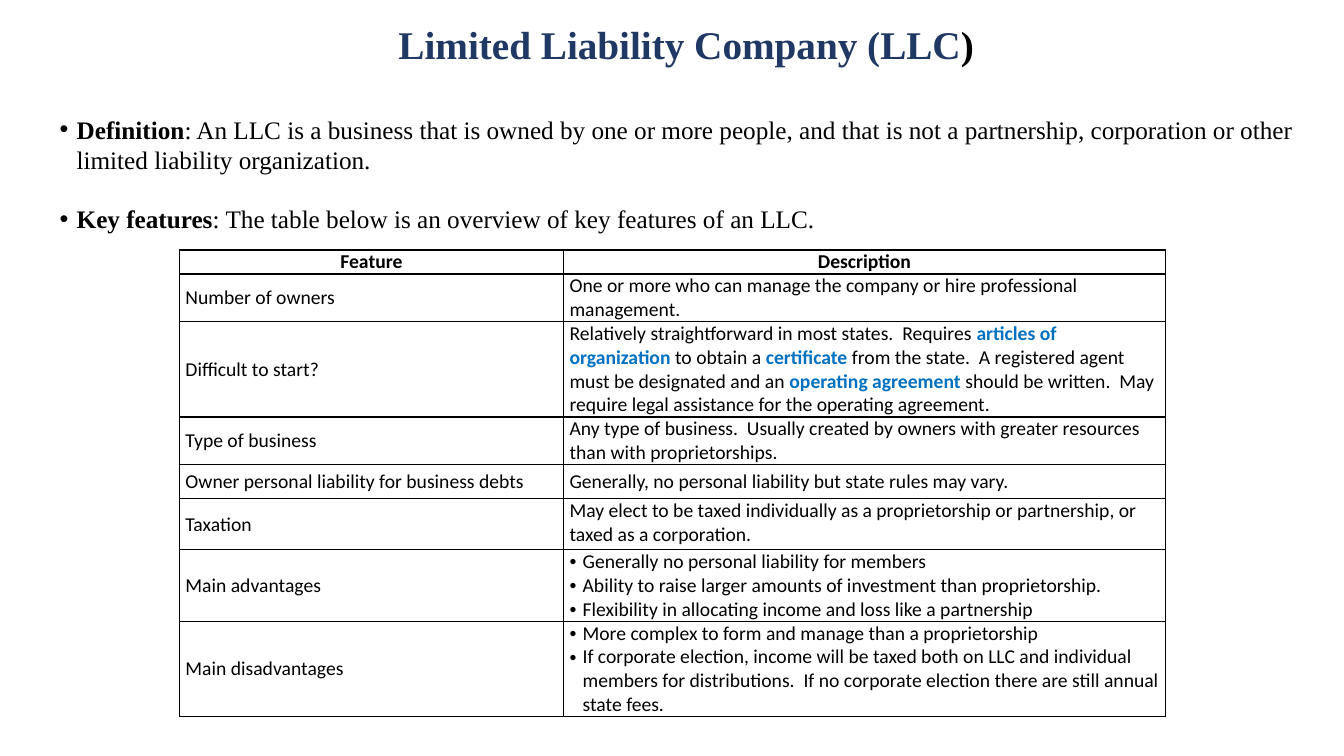
from dataclasses import dataclass
from typing import Any, NamedTuple

from lxml import etree
from pptx import Presentation
from pptx import util as u
from pptx.dml.color import RGBColor
from pptx.enum import text
from pptx.oxml.ns import qn

SLIDE_WIDTH, SLIDE_HEIGHT = u.Inches(13.33), u.Inches(7.5)
BLACK, NAVY, BLUE = "000000", "203864", "0070C0"
SERIF, SANS = "Times New Roman", "Calibri"


class Run(NamedTuple):
    words: str
    bold: bool = False
    colour: str = BLACK


class Box(NamedTuple):
    """Left, top, width and height in percent of the slide."""
    left: float
    top: float
    width: float
    height: float


@dataclass
class Line:
    runs: list[Run]
    hanging: float = 0  # inches; a bullet is drawn when above zero
    centred: bool = False
    before: float = 0


@dataclass
class Feature:
    label: Line
    description: list[Line]
    height: float  # percent of the slide height
    middle: bool = False


def across(percent: float) -> int:
    return round(SLIDE_WIDTH * percent / 100)


def down(percent: float) -> int:
    return round(SLIDE_HEIGHT * percent / 100)


def colour(code: str) -> RGBColor:
    return RGBColor.from_string(code)


def set_format(target: Any, values: dict[str, Any]) -> None:
    for name, value in values.items():
        setattr(target, name, value)


def place(shape: Any, box: Box) -> None:
    set_format(shape, {"left": across(box.left), "top": down(box.top),
                       "width": across(box.width), "height": down(box.height)})


def set_bullet(paragraph: Any, hanging: float) -> None:
    properties = paragraph._p.get_or_add_pPr()
    properties.set("marL", str(u.Inches(hanging)))
    properties.set("indent", str(-u.Inches(hanging)))
    if hanging:
        etree.SubElement(properties, qn("a:buFont"), typeface="Arial")
        etree.SubElement(properties, qn("a:buChar"), char="•")
    else:
        etree.SubElement(properties, qn("a:buNone"))


def write(frame: Any, lines: list[Line], font: str, size: float) -> None:
    for index, line in enumerate(lines):
        paragraph = frame.add_paragraph() if index else frame.paragraphs[0]
        alignment = text.PP_ALIGN.CENTER if line.centred else text.PP_ALIGN.LEFT
        set_format(paragraph, {"alignment": alignment, "line_spacing": 1.0,
                               "space_before": u.Pt(line.before), "space_after": u.Pt(0)})
        set_bullet(paragraph, line.hanging)
        for part in line.runs:
            run = paragraph.add_run()
            run.text = part.words
            set_format(run.font, {"name": font, "size": u.Pt(size), "bold": part.bold})
            run.font.color.rgb = colour(part.colour)


def set_borders(cell: Any) -> None:
    properties = cell._tc.get_or_add_tcPr()
    for side in ("lnL", "lnR", "lnT", "lnB"):
        border = etree.SubElement(properties, qn(f"a:{side}"), w=str(u.Pt(1)))
        fill = etree.SubElement(border, qn("a:solidFill"))
        etree.SubElement(fill, qn("a:srgbClr"), val=BLACK)


def fill_cell(cell: Any, lines: list[Line], middle: bool) -> None:
    anchor = text.MSO_ANCHOR.MIDDLE if middle else text.MSO_ANCHOR.TOP
    set_format(cell, {"margin_left": u.Inches(0.06), "margin_right": u.Inches(0.06),
                      "margin_top": 0, "margin_bottom": 0, "vertical_anchor": anchor})
    set_borders(cell)
    cell.fill.background()
    write(cell.text_frame, lines, SANS, 14)


def plain(words: str) -> Line:
    return Line([Run(words)])


def bullet(words: str) -> Line:
    return Line([Run(words)], hanging=0.13)


def heading(words: str) -> Line:
    return Line([Run(words, True)], centred=True)


def term(words: str) -> Run:
    return Run(words, True, BLUE)


TITLE = Line([Run("Limited Liability Company (LLC", True, NAVY), Run(")", True)], centred=True)

POINTS = [
    Line([Run("Definition", True),
          Run(": An LLC is a business that is owned by one or more people, and that is not "
              "a partnership, corporation or other limited liability organization.")],
         hanging=0.17),
    Line([Run("Key features", True),
          Run(": The table below is an overview of key features of an LLC.")],
         hanging=0.17, before=21),
]

FEATURES = [
    Feature(heading("Feature"), [heading("Description")], 3.13),
    Feature(plain("Number of owners"),
            [plain("One or more who can manage the company or hire professional management.")],
            6.2),
    Feature(plain("Difficult to start?"),
            [Line([Run("Relatively straightforward in most states.  Requires "),
                   term("articles of organization "), Run("to obtain a "), term("certificate"),
                   Run(" from the state.  A registered agent must be designated and an "),
                   term("operating agreement "),
                   Run("should be written.  May require legal assistance for the "
                       "operating agreement.")])], 12.4),
    Feature(plain("Type of business"),
            [plain("Any type of business.  Usually created by owners with greater resources "
                   "than with proprietorships.")], 6.2),
    Feature(plain("Owner personal liability for business debts"),
            [plain("Generally, no personal liability but state rules may vary.")], 4.5, True),
    Feature(plain("Taxation"),
            [plain("May elect to be taxed individually as a proprietorship or partnership, "
                   "or taxed as a corporation.")], 6.75),
    Feature(plain("Main advantages"),
            [bullet("Generally no personal liability for members"),
             bullet("Ability to raise larger amounts of investment than proprietorship."),
             bullet("Flexibility in allocating income and loss like a partnership")], 9.3),
    Feature(plain("Main disadvantages"),
            [bullet("More complex to form and manage than a proprietorship"),
             bullet("If corporate election, income will be taxed both on LLC and individual "
                    "members for distributions.  If no corporate election there are still "
                    "annual state fees.")], 12.4),
]
COLUMN_WIDTHS = (28.58, 44.79)


def add_feature_table(slide: Any, left: float, top: float) -> None:
    height = sum(feature.height for feature in FEATURES)
    frame = slide.shapes.add_table(len(FEATURES), len(COLUMN_WIDTHS), across(left), down(top),
                                   across(sum(COLUMN_WIDTHS)), down(height))
    table = frame.table
    table.horz_banding = False
    for column, width in zip(table.columns, COLUMN_WIDTHS):
        column.width = across(width)
    for row, feature in zip(table.rows, FEATURES):
        row.height = down(feature.height)
        fill_cell(row.cells[0], [feature.label], True)
        fill_cell(row.cells[1], feature.description, feature.middle)


def main() -> None:
    presentation = Presentation()
    set_format(presentation, {"slide_width": SLIDE_WIDTH, "slide_height": SLIDE_HEIGHT})
    slide = presentation.slides.add_slide(presentation.slide_layouts[1])

    # Title and list
    title, body = slide.shapes.title, slide.placeholders[1]
    place(title, Box(28.81, 2, 44.49, 7.6))
    place(body, Box(3.68, 14.4, 96, 17.47))
    for shape, lines, size in ((title, [TITLE], 28), (body, POINTS, 18)):
        set_format(shape.text_frame, {"word_wrap": True, "auto_size": text.MSO_AUTO_SIZE.NONE,
                                      "vertical_anchor": text.MSO_ANCHOR.TOP})
        write(shape.text_frame, lines, SERIF, size)

    # Feature table
    add_feature_table(slide, 13.35, 33.07)
    presentation.save("out.pptx")


if __name__ == "__main__":
    main()
